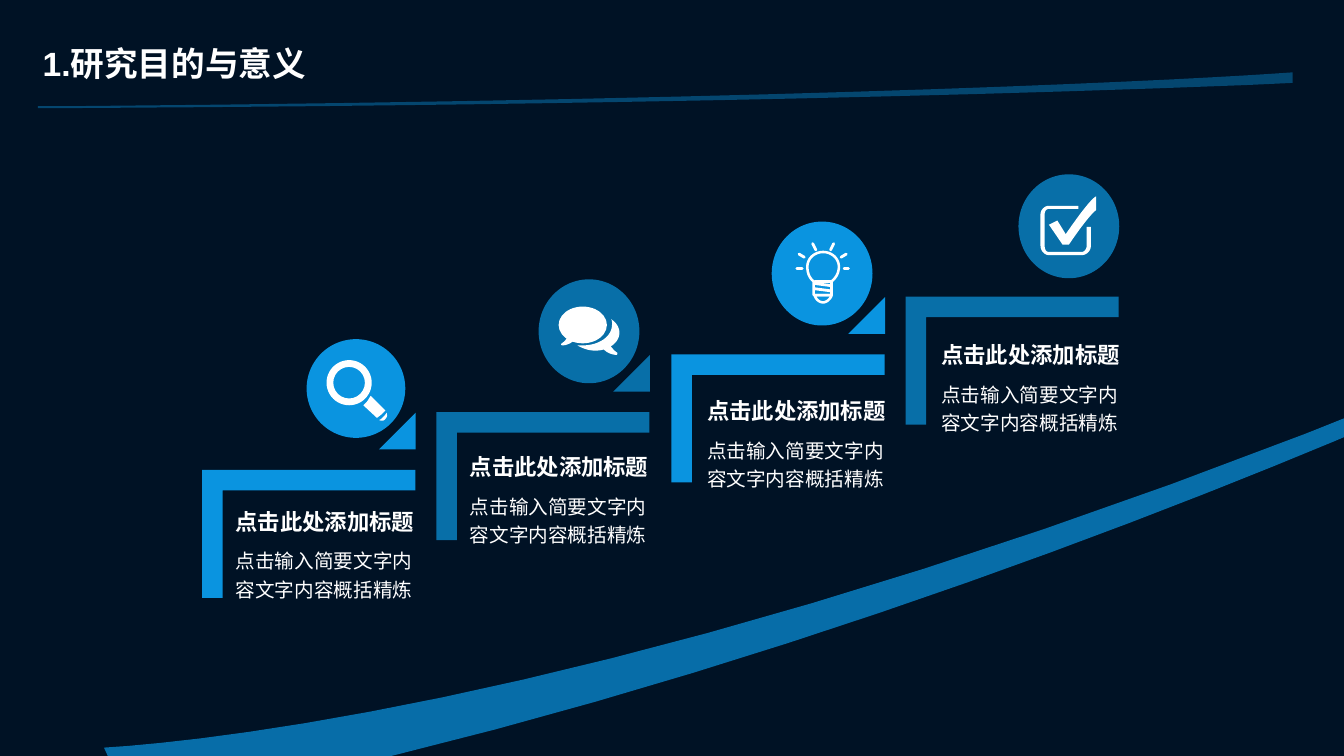
"""Build the "research purpose and significance" slide: four rising steps with icons."""
from lxml.etree import SubElement
from pptx import Presentation
from pptx.dml.color import RGBColor
from pptx.enum.shapes import MSO_CONNECTOR, MSO_SHAPE
from pptx.enum.text import MSO_ANCHOR, MSO_AUTO_SIZE, PP_ALIGN
from pptx.oxml.ns import qn
from pptx.util import Pt

PX = 9525
CURVE_STEPS = 16
NAVY = RGBColor(0x00, 0x12, 0x25)
BRIGHT = RGBColor(0x0A, 0x94, 0xE0)
DEEP = RGBColor(0x08, 0x6F, 0xA8)
WHITE = RGBColor(0xFF, 0xFF, 0xFF)

prs = Presentation()
prs.slide_width = 1280 * PX
prs.slide_height = 720 * PX
slide = prs.slides.add_slide(prs.slide_layouts[5])
slide.background.fill.solid()
slide.background.fill.fore_color.rgb = NAVY
shapes = slide.shapes


def add_filled(kind, box, color, adjustments=()):
    """Add a preset shape with a plain fill."""
    shape = shapes.add_shape(kind, *(v * PX for v in box))
    for index, value in enumerate(adjustments):
        shape.adjustments[index] = value
    shape.shadow.inherit = False
    shape.fill.solid()
    shape.fill.fore_color.rgb = color
    shape.line.fill.background()
    return shape


def add_outline(outline, color):
    """Add a closed outline; pairs are lines and groups of six are Bézier curves."""
    start, *segments = outline
    points = [start]
    for segment in segments:
        if len(segment) == 2:
            points.append(segment)
            continue
        x0, y0 = points[-1]
        x1, y1, x2, y2, x3, y3 = segment
        for step in range(1, CURVE_STEPS + 1):
            t = step / CURVE_STEPS
            a, b, c, d = (1 - t) ** 3, 3 * t * (1 - t) ** 2, 3 * t * t * (1 - t), t ** 3
            points.append((a * x0 + b * x1 + c * x2 + d * x3,
                           a * y0 + b * y1 + c * y2 + d * y3))
    emu = [(x * PX, y * PX) for x, y in points]
    builder = shapes.build_freeform(*emu[0], scale=1.0)
    builder.add_line_segments(emu[1:], close=True)
    shape = builder.convert_to_shape()
    shape.shadow.inherit = False
    shape.fill.solid()
    shape.fill.fore_color.rgb = color
    shape.line.fill.background()
    return shape


heading_rule = [(1231, 69), (1231, 79), (1188, 81), (727, 99, 233, 102, 57, 103),
                (36, 103), (36, 101), (78, 101), (782, 95, 1149, 75, 1230, 69)]
sweep = [(99, 712), (127, 773), (177, 763), (707, 660, 1223, 444, 1406, 362),
         (1428, 352), (1423, 342), (1379, 359), (638, 663, 198, 706, 100, 712)]
for band, opacity in ((heading_rule, 40), (sweep, 70)):
    band_color = add_outline(band, BRIGHT)._element.spPr.find(f".//{qn('a:srgbClr')}")
    SubElement(band_color, qn("a:alpha"), val=str(opacity * 1000))

steps = [
    (BRIGHT, (292, 323, 94, 94), (215, 479), 199),
    (DEEP, (513, 266, 96, 99), (438, 427), 189),
    (BRIGHT, (735, 211, 96, 99), (664, 374), 189),
    (DEEP, (970, 166, 96, 99), (887, 320), 189),
]
captions = [(shapes.title, (31, 36, 295, 48), "1.研究目的与意义",
             {"size": Pt(24), "bold": True}, None, True)]
for number, (color, disc, (text_x, text_y), body_width) in enumerate(steps):
    corner_x, corner_y = 233 + round(number * 670 / 3), 407 - 55 * number
    corner = add_filled(MSO_SHAPE.CORNER, (corner_x, corner_y, 122, 203), color, (0.16, 0.16))
    corner.rotation = 90
    if number < len(steps) - 1:
        add_filled(MSO_SHAPE.ISOSCELES_TRIANGLE,
                   (corner_x + 128, corner_y - 14, 35, 35), color, (1,))
    add_filled(MSO_SHAPE.OVAL, disc, color)
    captions += [
        (None, (text_x, text_y, 192, 35), "点击此处添加标题",
         {"size": Pt(16), "bold": True}, None, False),
        (None, (text_x, text_y + 35, body_width, 64), "点击输入简要文字内容文字内容概括精炼",
         {"size": Pt(14), "bold": False}, 1.2, True),
    ]

add_filled(MSO_SHAPE.DONUT, (311, 343, 43, 43), WHITE, (0.15,))
add_filled(MSO_SHAPE.OVAL, (532, 292, 46, 35), WHITE)

magnifier_handle = [(367, 391), (353, 377), (350, 382), (346, 386), (359, 398), (363, 395)]
magnifier_cap = [(368, 393), (368, 394, 367, 395, 365, 397), (363, 399, 362, 400, 361, 400),
                 (363, 401, 366, 401, 367, 399), (369, 397, 369, 395, 368, 393)]
back_bubble = [(582, 304), (583, 305, 583, 307, 583, 309), (583, 321, 570, 329, 555, 329),
               (553, 329, 552, 329, 550, 329), (555, 332, 561, 334, 567, 334),
               (580, 334, 590, 326, 590, 317), (590, 312, 587, 307, 582, 304)]
front_tail = [(541, 319), (540, 323, 537, 326, 535, 327), (534, 328, 534, 329, 536, 329),
              (538, 329, 544, 328, 549, 322), (554, 315, 541, 319, 541, 319)]
back_tail = [(580, 327), (582, 331, 586, 335, 588, 336), (588, 337, 588, 338, 587, 338),
             (585, 338, 577, 337, 573, 330), (568, 324, 580, 327, 580, 327)]
tick = [(1044, 187), (1038, 189, 1015, 223, 1015, 223), (1007, 210), (999, 214),
        (1012, 233), (1018, 233), (1018, 233, 1036, 206, 1044, 200)]
tick_box = [(995, 234), (995, 237, 996, 240, 999, 240), (1030, 240),
            (1033, 240, 1035, 237, 1035, 234), (1035, 216), (1039, 216), (1039, 234),
            (1039, 239, 1035, 243, 1030, 243), (999, 243), (995, 243, 991, 239, 991, 234),
            (991, 204), (991, 200, 995, 196, 999, 196), (1027, 196), (1027, 199),
            (999, 199), (996, 199, 995, 202, 995, 204)]
for icon_part in (magnifier_handle, magnifier_cap, back_bubble, front_tail, back_tail,
                  tick, tick_box):
    add_outline(icon_part, WHITE)

bulb_glass = [(775, 281), (775, 268), (771, 265, 769, 260, 769, 254),
              (769, 246, 776, 240, 784, 240), (792, 240, 799, 246, 799, 254),
              (799, 260, 796, 265, 792, 268), (792, 281)]
bulb_base = [(776, 281), (776, 283, 779, 288, 784, 288), (788, 288, 792, 283, 792, 281)]
for bulb_part in (bulb_glass, bulb_base):
    bulb = add_outline(bulb_part, WHITE)
    bulb.fill.background()
    bulb.line.color.rgb = WHITE
    bulb.line.width = Pt(1.8)

bulb_threads = [(776, 268, 791, 268), (776, 270, 791, 272), (776, 275, 791, 277)]
bulb_rays = [(759, 256, 764, 256), (804, 256, 808, 256), (774, 232, 777, 238),
             (794, 232, 791, 238), (761, 242, 766, 245), (806, 242, 801, 245)]
for ends in bulb_threads + bulb_rays:
    stroke = shapes.add_connector(MSO_CONNECTOR.STRAIGHT, *(v * PX for v in ends))
    stroke.line.color.rgb = WHITE
    stroke.line.width = Pt(2)
    properties = stroke._element.spPr
    properties.find(qn("a:ln")).set("cap", "rnd")
    SubElement(properties, qn("a:effectLst"))

for holder, box, wording, font_format, spacing, wraps in captions:
    frame_box = [v * PX for v in box]
    caption = holder or shapes.add_textbox(*frame_box)
    caption.left, caption.top, caption.width, caption.height = frame_box
    frame = caption.text_frame
    frame.text = wording
    frame.word_wrap = wraps
    frame.auto_size = MSO_AUTO_SIZE.NONE
    frame.vertical_anchor = MSO_ANCHOR.TOP
    paragraph = frame.paragraphs[0]
    paragraph.alignment = PP_ALIGN.LEFT
    paragraph.line_spacing = spacing
    font = paragraph.runs[0].font
    for attribute, value in {"name": "Arial", **font_format}.items():
        setattr(font, attribute, value)
    font.color.rgb = WHITE

prs.save("out.pptx")
